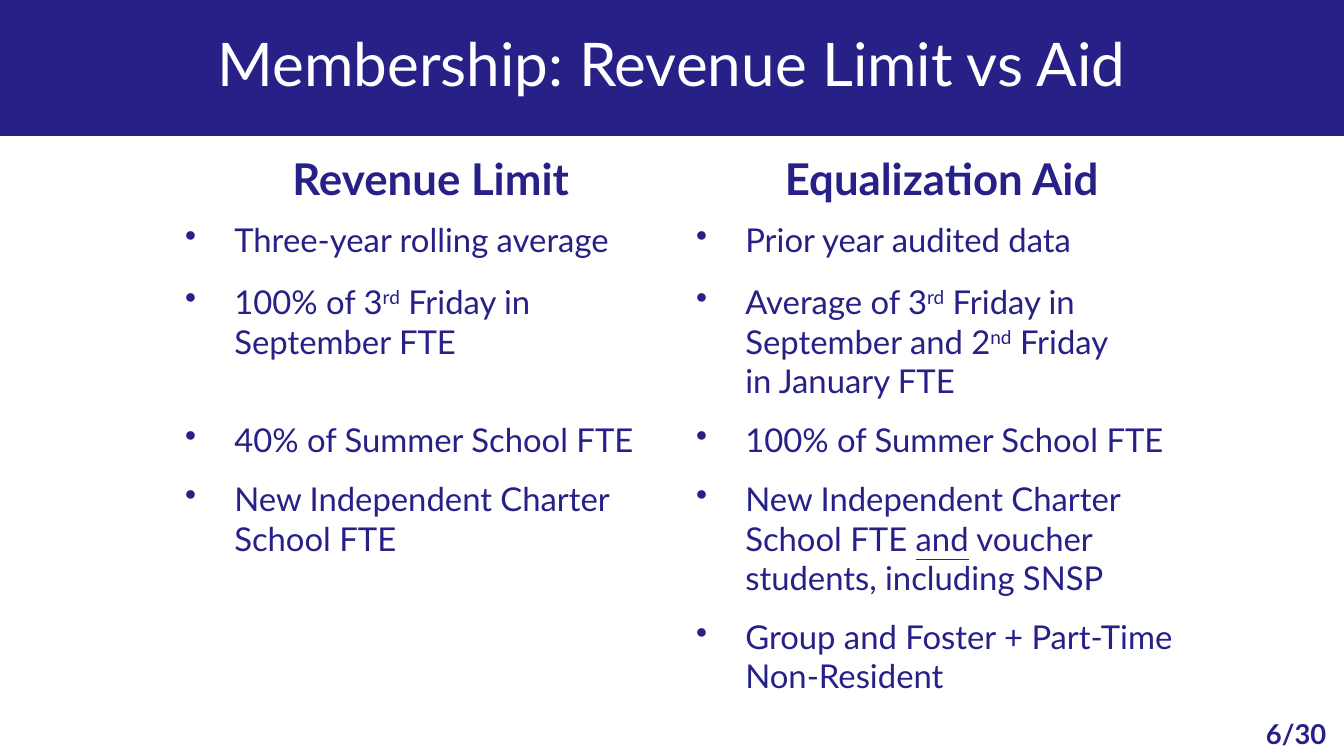
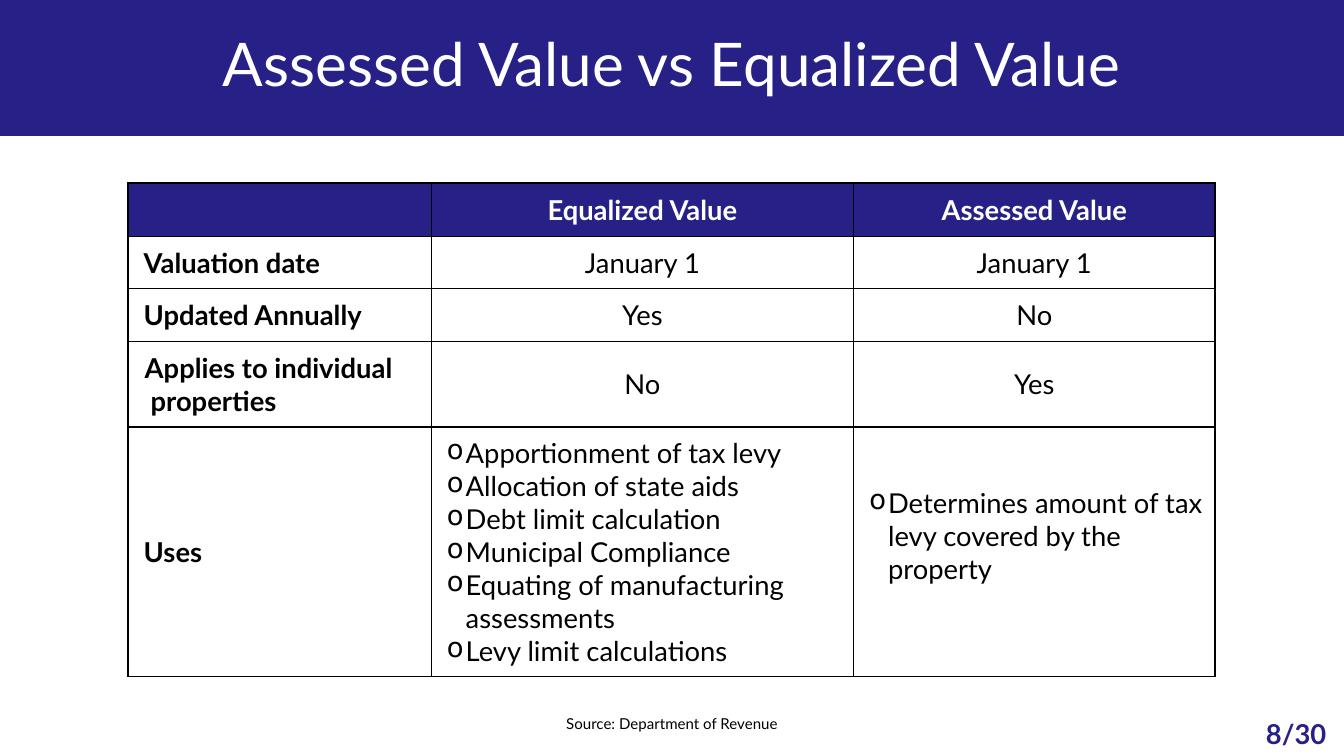
from dataclasses import dataclass

from lxml import etree
from pptx import Presentation
from pptx.dml.color import RGBColor
from pptx.enum.shapes import MSO_SHAPE
from pptx.enum.text import MSO_ANCHOR, PP_ALIGN
from pptx.oxml.ns import qn
from pptx.util import Inches, Pt

CENTER, LEFT = PP_ALIGN.CENTER, PP_ALIGN.LEFT
TOP, MIDDLE = MSO_ANCHOR.TOP, MSO_ANCHOR.MIDDLE
TITLE_ONLY = 5
SLIDE_W, SLIDE_H = 13.65, 7.68
PAGE_TOTAL = 30


@dataclass(frozen=True)
class Theme:
    font: str = "Lato"
    navy: str = "262087"
    white: str = "FFFFFF"
    ink: str = "010103"
    black: str = "000000"
    title: int = 44
    column_head: int = 32
    bullet: int = 24
    cell: int = 20
    source: int = 11


T = Theme()

# A paragraph is plain text, or a list of parts: text or (text, style).
SUP, UNDERLINE, BREAK = "sup", "underline", "\v"

MEMBERSHIP = {
    "page": 6,
    "title": "Membership: Revenue Limit vs Aid",
    "at": (1.78, 1.5),
    "cols": [5.19, 5.19],
    "row_heights": [0.64, 0.63, 1.4, 0.6, 1.4, 1.0],
    "head": ["Revenue Limit", "Equalization Aid"],
    "rows": [
        ["Three-year rolling average", "Prior year audited data"],
        [["100% of 3", ("rd", SUP), " Friday in September FTE"],
         ["Average of 3", ("rd", SUP), " Friday in September and 2",
          ("nd", SUP), " Friday ", BREAK, "in January FTE"]],
        ["40% of Summer School FTE", "100% of Summer School FTE"],
        ["New Independent Charter School FTE",
         ["New Independent Charter School FTE ", ("and", UNDERLINE),
          " voucher students, including SNSP"]],
        [None, "Group and Foster + Part-Time Non-Resident"],
    ],
}

VALUES = {
    "page": 8,
    "title": "Assessed Value vs Equalized Value",
    "at": (1.3, 1.86),
    "cols": [3.08, 4.29, 3.67],
    "row_heights": [0.54, 0.53, 0.53, 0.87, 2.53],
    "head": [None, "Equalized Value", "Assessed Value"],
    "rows": [
        ["Valuation date", "January 1", "January 1"],
        ["Updated Annually", "Yes", "No"],
        ["Applies to individual properties", "No", "Yes"],
    ],
    "uses_label": "Uses",
    "uses": [
        ["Apportionment of tax levy", "Allocation of state aids",
         "Debt limit calculation", "Municipal Compliance",
         "Equating of manufacturing assessments", "Levy limit calculations"],
        ["Determines amount of tax levy covered by the property"],
    ],
    "source": "Source: Department of Revenue",
}


def rgb(color):
    return RGBColor.from_string(color)


def write(p, content, size, color, bold=False, align=LEFT, indent=None, bullet=None):
    """Fill a paragraph; indent is (left margin, first line) in inches."""
    p.alignment = align
    pPr = p._p.get_or_add_pPr()
    if indent:
        pPr.set("marL", str(Inches(indent[0])))
        pPr.set("indent", str(Inches(indent[1])))
    if bullet:
        etree.SubElement(pPr, qn("a:buChar")).set("char", bullet)
    for part in [content] if isinstance(content, str) else content:
        if part == BREAK:
            p.add_line_break()
            continue
        text, style = (part, None) if isinstance(part, str) else part
        r = p.add_run()
        r.text = text
        f = r.font
        f.name, f.size, f.bold = T.font, Pt(size), bold
        f.color.rgb = rgb(color)
        if style == UNDERLINE:
            f.underline = True
        elif style == SUP:
            r._r.get_or_add_rPr().set("baseline", "30000")


def write_cell(cell, paragraphs, margin=0.1, anchor=TOP, **style):
    cell.vertical_anchor = anchor
    cell.margin_left = cell.margin_right = Inches(0.1)
    cell.margin_top = cell.margin_bottom = Inches(margin)
    tf = cell.text_frame
    for i, content in enumerate(paragraphs):
        write(tf.add_paragraph() if i else tf.paragraphs[0], content, **style)


def add_label(s, text, box, **style):
    tf = s.shapes.add_textbox(*map(Inches, box)).text_frame
    tf.word_wrap = True
    write(tf.paragraphs[0], text, align=CENTER, **style)


def add_grid(s, data):
    """Add an unfilled, unbanded table with the given sizes."""
    cols, heights = data["cols"], data["row_heights"]
    box = (*data["at"], sum(cols), sum(heights))
    table = s.shapes.add_table(len(heights), len(cols), *map(Inches, box)).table
    table.first_row = table.horz_banding = False
    for col, width in zip(table.columns, cols):
        col.width = Inches(width)
    for row, height in zip(table.rows, heights):
        row.height = Inches(height)
    for cell in table.iter_cells():
        cell.fill.background()
    return table


def set_borders(cell, color, points):
    tcPr = cell._tc.get_or_add_tcPr()
    for i, side in enumerate(("a:lnL", "a:lnR", "a:lnT", "a:lnB")):
        ln = etree.Element(qn(side), w=str(Pt(points)))
        fill = etree.SubElement(ln, qn("a:solidFill"))
        etree.SubElement(fill, qn("a:srgbClr")).set("val", color)
        tcPr.insert(i, ln)


def add_band(s, layout):
    """Draw the title band and move it to the back of the layout."""
    band = s.shapes.add_shape(MSO_SHAPE.RECTANGLE, 0, 0, Inches(SLIDE_W), Inches(1.38))
    band.shadow.inherit = False
    band.fill.solid()
    band.fill.fore_color.rgb = rgb(T.navy)
    band.line.fill.background()
    layout.shapes.element.insert(2, band.element)


def add_slide(prs, layout, data):
    s = prs.slides.add_slide(layout)
    title = s.shapes.title
    title.text_frame.vertical_anchor = MIDDLE
    p = title.text_frame.paragraphs[0]
    p.line_spacing, p.space_after = 0.9, Pt(6)
    write(p, data["title"], T.title, T.white, align=CENTER)
    add_label(s, f"{data['page']}/{PAGE_TOTAL}", (12.68, 7.24, 0.97, 0.44),
              size=T.cell, color=T.navy, bold=True)
    return s


def fill_membership(s, data):
    table = add_grid(s, data)
    for c, text in enumerate(data["head"]):
        write_cell(table.cell(0, c), [text], margin=0.05, size=T.column_head,
                   color=T.navy, bold=True, align=CENTER)
    for r, row in enumerate(data["rows"], 1):
        for c, content in enumerate(row):
            if content:
                write_cell(table.cell(r, c), [content], size=T.bullet,
                           color=T.navy, indent=(0.5, -0.5), bullet="•")


def fill_values(s, data):
    table = add_grid(s, data)
    for i, cell in enumerate(table.iter_cells()):
        set_borders(cell, T.black, 1)
        cell.fill.solid()
        cell.fill.fore_color.rgb = rgb(T.navy if i < len(data["cols"]) else T.white)
    for c, text in enumerate(data["head"]):
        if text:
            write_cell(table.cell(0, c), [text], anchor=MIDDLE, size=T.cell,
                       color=T.white, bold=True, align=CENTER)
    labels = [row[0] for row in data["rows"]] + [data["uses_label"]]
    for r, label in enumerate(labels, 1):
        wraps = label == "Applies to individual properties"
        write_cell(table.cell(r, 0), [label], anchor=MIDDLE, size=T.cell, color=T.ink,
                   bold=True, indent=(0.13, -0.06) if wraps else (0, 0.06))
    for r, row in enumerate(data["rows"], 1):
        for c, text in enumerate(row[1:], 1):
            write_cell(table.cell(r, c), [text], anchor=MIDDLE, size=T.cell,
                       color=T.ink, align=CENTER)
    for c, uses in enumerate(data["uses"], 1):
        short = len(uses) == 1
        write_cell(table.cell(len(labels), c), uses, margin=0.6 if short else 0.1,
                   anchor=TOP if short else MIDDLE, size=T.cell, color=T.ink,
                   indent=(0.25, -0.19), bullet="o")
    add_label(s, data["source"], (5.26, 7.21, 3.13, 0.29),
              size=T.source, color=T.black)


def main():
    prs = Presentation()
    prs.slide_width, prs.slide_height = Inches(SLIDE_W), Inches(SLIDE_H)
    layout = prs.slide_layouts[TITLE_ONLY]
    title = layout.placeholders[0]
    title.left = title.top = 0
    title.width, title.height = Inches(SLIDE_W), Inches(1.36)

    membership = add_slide(prs, layout, MEMBERSHIP)
    add_band(membership, layout)
    fill_membership(membership, MEMBERSHIP)
    fill_values(add_slide(prs, layout, VALUES), VALUES)
    prs.save("out.pptx")


if __name__ == "__main__":
    main()
